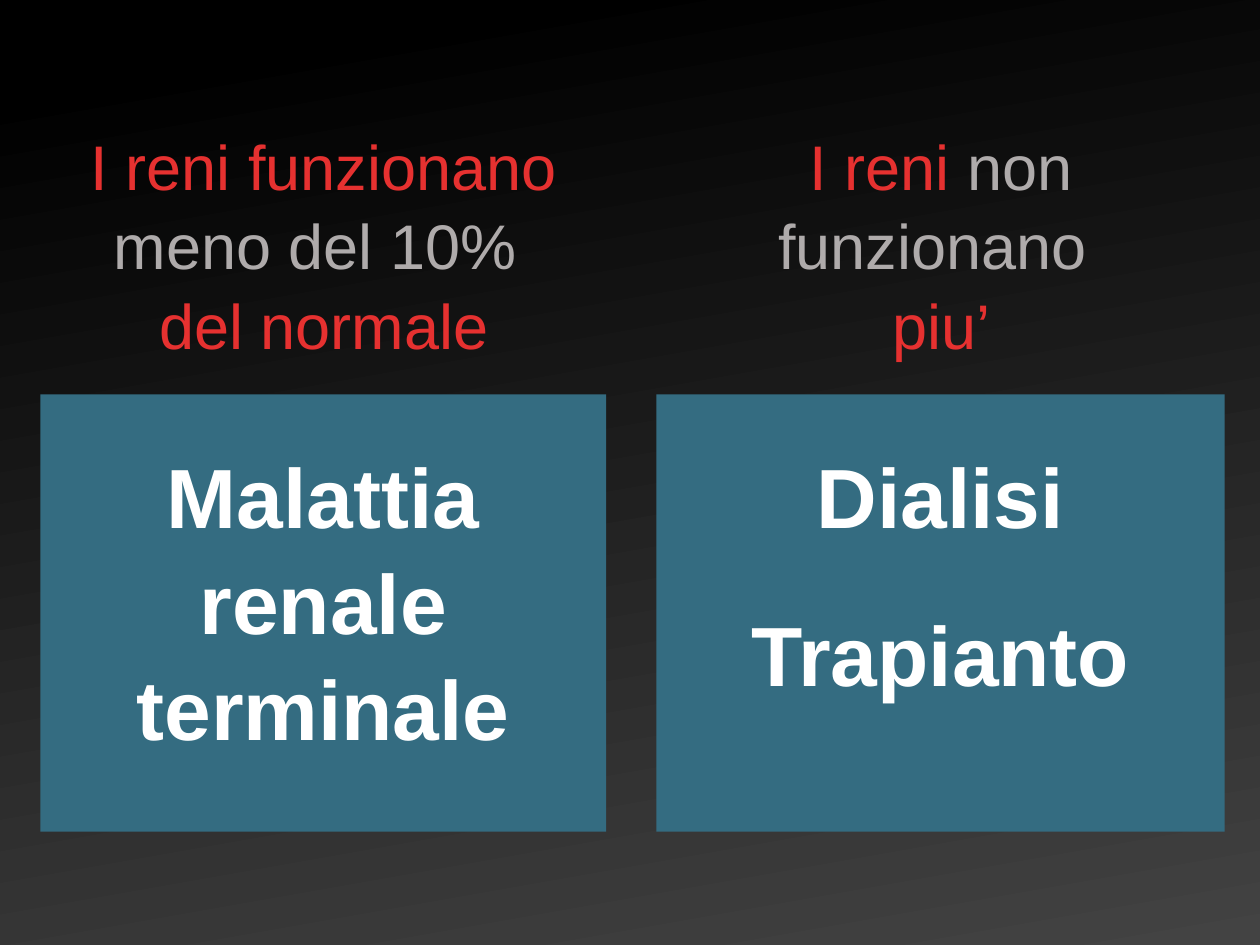
from dataclasses import dataclass

from pptx import Presentation
from pptx.dml.color import RGBColor
from pptx.enum.shapes import MSO_SHAPE
from pptx.enum.text import MSO_ANCHOR, PP_ALIGN
from pptx.util import Inches, Pt

RECTANGLE = MSO_SHAPE.RECTANGLE
TOP, BOTTOM = MSO_ANCHOR.TOP, MSO_ANCHOR.BOTTOM
CENTER = PP_ALIGN.CENTER
BLANK_LAYOUT = 6
BREAK = "\n"


@dataclass(frozen=True)
class Theme:
    font: str = "Arial"
    red: str = "E63130"
    grey: str = "AFABAB"
    white: str = "FFFFFF"
    panel: str = "346C81"
    night: str = "000000"
    dusk: str = "434343"
    heading_size: int = 36
    body_size: int = 48
    line_spacing: float = 1.05
    paragraph_gap: int = 30


THEME = Theme()
WIDTH, HEIGHT = Inches(10), Inches(7.5)
HEADING_TOP, HEADING_HEIGHT = Inches(1), Inches(1.92)
PANEL_TOP, PANEL_HEIGHT = Inches(3.13), Inches(3.47)
BODY_INSET = Inches(0.31)


def paint_background(slide):
    fill = slide.background.fill
    fill.gradient()
    fill.gradient_angle = 280
    colours = ((0.08, THEME.night), (1, THEME.dusk))
    for stop, (position, colour) in zip(fill.gradient_stops, colours):
        stop.position = position
        stop.color.rgb = RGBColor.from_string(colour)


def add_text(group, box, paragraphs, size, anchor, bold=False):
    frame = group.shapes.add_textbox(*box).text_frame
    frame.word_wrap = True
    frame.vertical_anchor = anchor
    for index, runs in enumerate(paragraphs):
        paragraph = frame.add_paragraph() if index else frame.paragraphs[0]
        paragraph.alignment = CENTER
        paragraph.line_spacing = THEME.line_spacing
        paragraph.font.size = Pt(size)
        if index and bold:
            paragraph.space_before = Pt(THEME.paragraph_gap)
        for words, colour in runs:
            run = paragraph.add_run()
            run.text = words.rstrip(BREAK)
            run.font.name = THEME.font
            run.font.size = Pt(size)
            run.font.bold = bold
            run.font.color.rgb = RGBColor.from_string(colour)
            if words.endswith(BREAK):
                paragraph.add_line_break()


def add_stage(slide, left, width, heading_left, heading_width, heading, body):
    group = slide.shapes.add_group_shape()
    panel = group.shapes.add_shape(RECTANGLE, left, PANEL_TOP, width, PANEL_HEIGHT)
    panel.shadow.inherit = False
    panel.fill.solid()
    panel.fill.fore_color.rgb = RGBColor.from_string(THEME.panel)
    panel.line.fill.background()
    heading_box = (heading_left, HEADING_TOP, heading_width, HEADING_HEIGHT)
    add_text(group, heading_box, heading, THEME.heading_size, BOTTOM)
    body_box = (left, PANEL_TOP + BODY_INSET, width, PANEL_HEIGHT - 2 * BODY_INSET)
    lines = [[(words, THEME.white)] for words in body]
    add_text(group, body_box, lines, THEME.body_size, TOP, bold=True)


def main():
    presentation = Presentation()
    presentation.slide_width, presentation.slide_height = WIDTH, HEIGHT
    slide = presentation.slides.add_slide(presentation.slide_layouts[BLANK_LAYOUT])
    paint_background(slide)
    add_stage(
        slide, Inches(0.32), Inches(4.49), Inches(0.2), Inches(4.74),
        [[("I reni funzionano\n", THEME.red),
          ("meno del 10% \n", THEME.grey),
          ("del normale", THEME.red)]],
        ["Malattia renale terminale"],
    )
    add_stage(
        slide, Inches(5.21), Inches(4.51), Inches(5.33), Inches(4.28),
        [[("I reni ", THEME.red), ("non funzionano ", THEME.grey)],
         [("piu’", THEME.red)]],
        ["Dialisi", "Trapianto"],
    )
    presentation.save("out.pptx")


if __name__ == "__main__":
    main()
